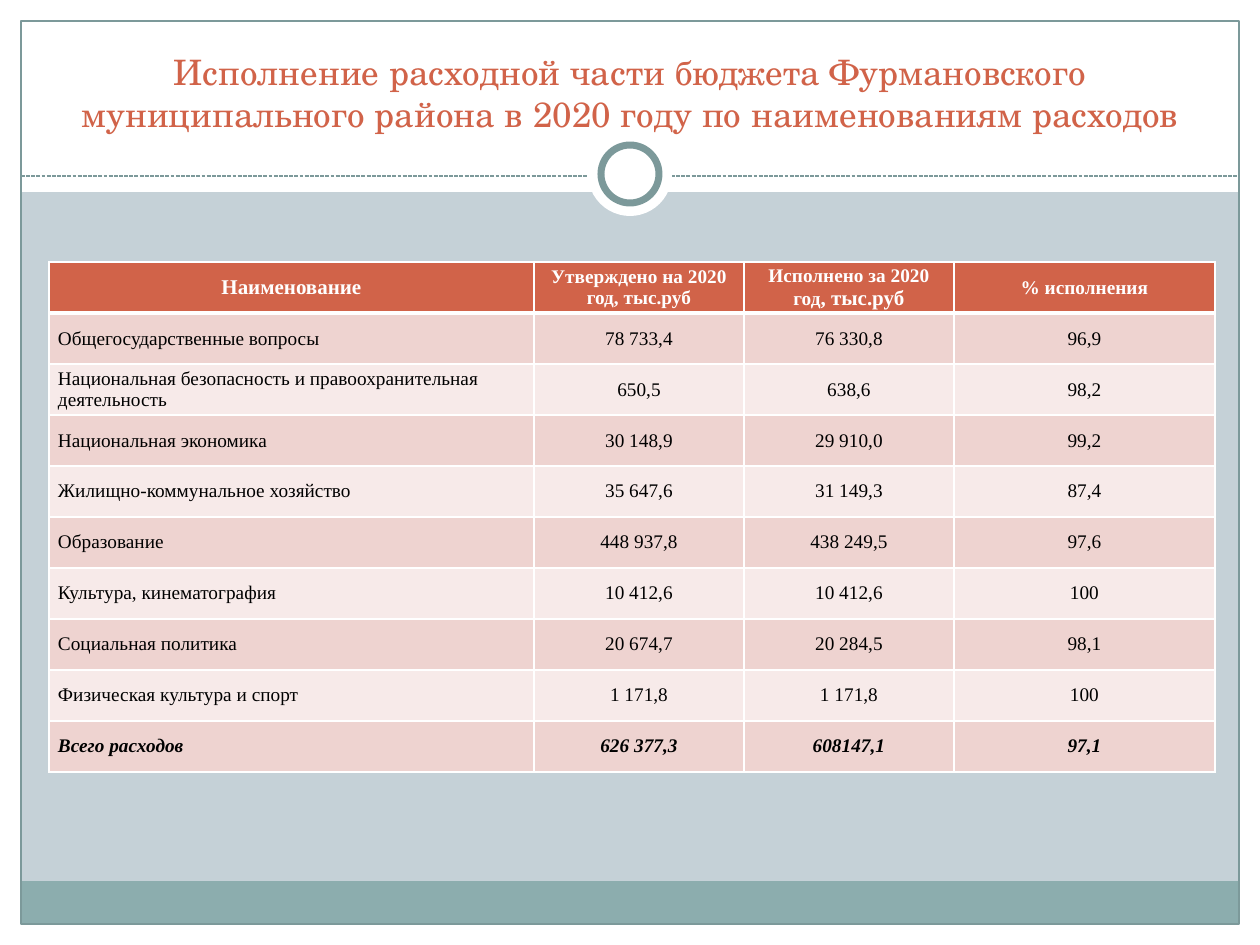
from dataclasses import dataclass

from lxml.etree import SubElement
from pptx import Presentation
from pptx.dml.color import RGBColor
from pptx.enum.dml import MSO_LINE
from pptx.enum.shapes import MSO_CONNECTOR, MSO_SHAPE
from pptx.enum.text import MSO_ANCHOR, MSO_AUTO_SIZE, PP_ALIGN
from pptx.oxml.ns import qn
from pptx.util import Pt

EMU_PER_PX = 914400 / 126
SLIDE_WIDTH, SLIDE_HEIGHT = 1260, 945
MARGIN = 21


@dataclass(frozen=True)
class Theme:
    background: str = "C5D1D7"
    white: str = "FFFFFF"
    text: str = "000000"
    accent: str = "D16349"
    footer: str = "8CADAE"
    frame: str = "7C999A"
    bands: tuple = ("EED3D0", "F7EAE9")
    title_font: str = "TeX Gyre Schola"
    table_font: str = "Times New Roman"
    title_size: int = 20
    header_size: int = 12
    table_size: int = 11
    thin_line: float = 0.75
    ring_line: int = 4
    cell_line: int = 1
    header_line: int = 3


THEME = Theme()
TITLE = ("Исполнение расходной части бюджета Фурмановского "
         "муниципального района в 2020 году по наименованиям расходов")
# Each header cell is a list of (text, size) runs.
HEADER = [
    [("Наименование", THEME.header_size)],
    [("Утверждено на 2020 год, тыс.руб", THEME.table_size)],
    [("Исполнено за 2020 год", THEME.table_size), (", тыс.руб", THEME.header_size)],
    [("% исполнения", THEME.table_size)],
]
EXPENSES = [
    ("Общегосударственные вопросы", "78 733,4", "76 330,8", "96,9"),
    ("Национальная безопасность и правоохранительная деятельность",
     "650,5", "638,6", "98,2"),
    ("Национальная экономика", "30 148,9", "29 910,0", "99,2"),
    ("Жилищно-коммунальное хозяйство", "35 647,6", "31 149,3", "87,4"),
    ("Образование", "448 937,8", "438 249,5", "97,6"),
    ("Культура, кинематография", "10 412,6", "10 412,6", "100"),
    ("Социальная политика", "20 674,7", "20 284,5", "98,1"),
    ("Физическая культура и спорт", "1 171,8", "1 171,8", "100"),
    ("Всего расходов", "626 377,3", "608147,1", "97,1"),
]
COLUMN_WIDTHS = (485, 210, 210, 261)
ROW_HEIGHT = 51


def px(length):
    return round(length * EMU_PER_PX)


def rgb(color):
    return RGBColor.from_string(color)


def apply_format(target, values):
    for name, value in values.items():
        setattr(target, name, value)


def fill_solid(fill, color):
    fill.solid()
    fill.fore_color.rgb = rgb(color)


def add_run(paragraph, text, color, font_values):
    run = paragraph.add_run()
    run.text = text
    apply_format(run.font, font_values)
    run.font.color.rgb = rgb(color)


def add_figure(slide, kind, box, fill=None, line_width=None):
    shape = slide.shapes.add_shape(kind, *map(px, box))
    shape.shadow.inherit = False
    if fill:
        fill_solid(shape.fill, fill)
    else:
        shape.fill.background()
    if line_width:
        fill_solid(shape.line.fill, THEME.frame)
        shape.line.width = Pt(line_width)
    else:
        shape.line.fill.background()


def add_dashed_line(slide, left, right, top):
    line = slide.shapes.add_connector(
        MSO_CONNECTOR.STRAIGHT, px(left), px(top), px(right), px(top))
    fill_solid(line.line.fill, THEME.frame)
    apply_format(line.line, {"width": Pt(THEME.thin_line),
                             "dash_style": MSO_LINE.SQUARE_DOT})
    SubElement(line._element.spPr, qn("a:effectLst"))


def add_decoration(slide):
    """Draw the white margins, footer band, frame, divider and ring."""
    inner_width = SLIDE_WIDTH - 2 * MARGIN
    inner_bottom = SLIDE_HEIGHT - MARGIN
    white_boxes = [
        (0, inner_bottom, SLIDE_WIDTH, MARGIN),
        (0, 0, SLIDE_WIDTH, 192),
        (0, 0, MARGIN, SLIDE_HEIGHT),
        (SLIDE_WIDTH - MARGIN, 0, MARGIN, SLIDE_HEIGHT),
    ]
    for box in white_boxes:
        add_figure(slide, MSO_SHAPE.RECTANGLE, box, THEME.white)
    add_figure(slide, MSO_SHAPE.RECTANGLE,
               (MARGIN, 881, inner_width, inner_bottom - 881), THEME.footer)
    add_figure(slide, MSO_SHAPE.RECTANGLE,
               (MARGIN, MARGIN, inner_width, inner_bottom - MARGIN),
               line_width=THEME.thin_line)
    add_dashed_line(slide, MARGIN, SLIDE_WIDTH - MARGIN, 176)
    for diameter, line_width in ((84, None), (58, THEME.ring_line)):
        left, top = SLIDE_WIDTH // 2 - diameter // 2, 174 - diameter // 2
        add_figure(slide, MSO_SHAPE.OVAL, (left, top, diameter, diameter),
                   THEME.white, line_width)


def format_title(slide):
    title = slide.shapes.title
    apply_format(title, {"left": px(42), "top": px(37),
                         "width": px(1176), "height": px(104)})
    apply_format(title.text_frame, {"word_wrap": True,
                                    "auto_size": MSO_AUTO_SIZE.NONE,
                                    "vertical_anchor": MSO_ANCHOR.BOTTOM})
    paragraph = title.text_frame.paragraphs[0]
    paragraph.alignment = PP_ALIGN.CENTER
    add_run(paragraph, TITLE, THEME.accent,
            {"name": THEME.title_font, "size": Pt(THEME.title_size)})
    # The title lies above the white band, so it moves to the front.
    slide.shapes._spTree.append(title._element)


def set_borders(cell, top, bottom):
    properties = cell._tc.get_or_add_tcPr()
    widths = {"lnL": THEME.cell_line, "lnR": THEME.cell_line,
              "lnT": top, "lnB": bottom}
    for side, width in widths.items():
        border = SubElement(properties, qn(f"a:{side}"), w=str(Pt(width)))
        fill = SubElement(border, qn("a:solidFill"))
        SubElement(fill, qn("a:srgbClr"), val=THEME.white)


def fill_cell(cell, runs, row, column, is_total):
    is_header = row == 0
    set_borders(cell,
                top=THEME.header_line if row == 1 else THEME.cell_line,
                bottom=THEME.header_line if is_header else THEME.cell_line)
    fill_solid(cell.fill, THEME.accent if is_header else THEME.bands[(row - 1) % 2])
    apply_format(cell, {"margin_left": px(9), "margin_right": px(9),
                        "margin_top": 0, "margin_bottom": 0,
                        "vertical_anchor": MSO_ANCHOR.MIDDLE})
    paragraph = cell.text_frame.paragraphs[0]
    centred = is_header or column > 0
    paragraph.alignment = PP_ALIGN.CENTER if centred else PP_ALIGN.LEFT
    for text, size in runs:
        add_run(paragraph, text, THEME.white if is_header else THEME.text,
                {"name": THEME.table_font, "size": Pt(size),
                 "bold": is_header or is_total, "italic": is_total})


def add_expense_table(slide):
    rows = HEADER, *([[(text, THEME.table_size)] for text in expense]
                     for expense in EXPENSES)
    table = slide.shapes.add_table(
        len(rows), len(COLUMN_WIDTHS), px(49), px(262),
        px(sum(COLUMN_WIDTHS)), px(ROW_HEIGHT * len(rows))).table
    for column, width in zip(table.columns, COLUMN_WIDTHS):
        column.width = px(width)
    for row, cells in enumerate(rows):
        table.rows[row].height = px(ROW_HEIGHT)
        for column, runs in enumerate(cells):
            fill_cell(table.cell(row, column), runs, row, column,
                      is_total=row == len(rows) - 1)


def main():
    presentation = Presentation()
    apply_format(presentation, {"slide_width": px(SLIDE_WIDTH),
                                "slide_height": px(SLIDE_HEIGHT)})
    slide = presentation.slides.add_slide(presentation.slide_layouts[5])
    fill_solid(slide.background.fill, THEME.background)
    add_decoration(slide)
    format_title(slide)
    add_expense_table(slide)
    presentation.save("out.pptx")


if __name__ == "__main__":
    main()
